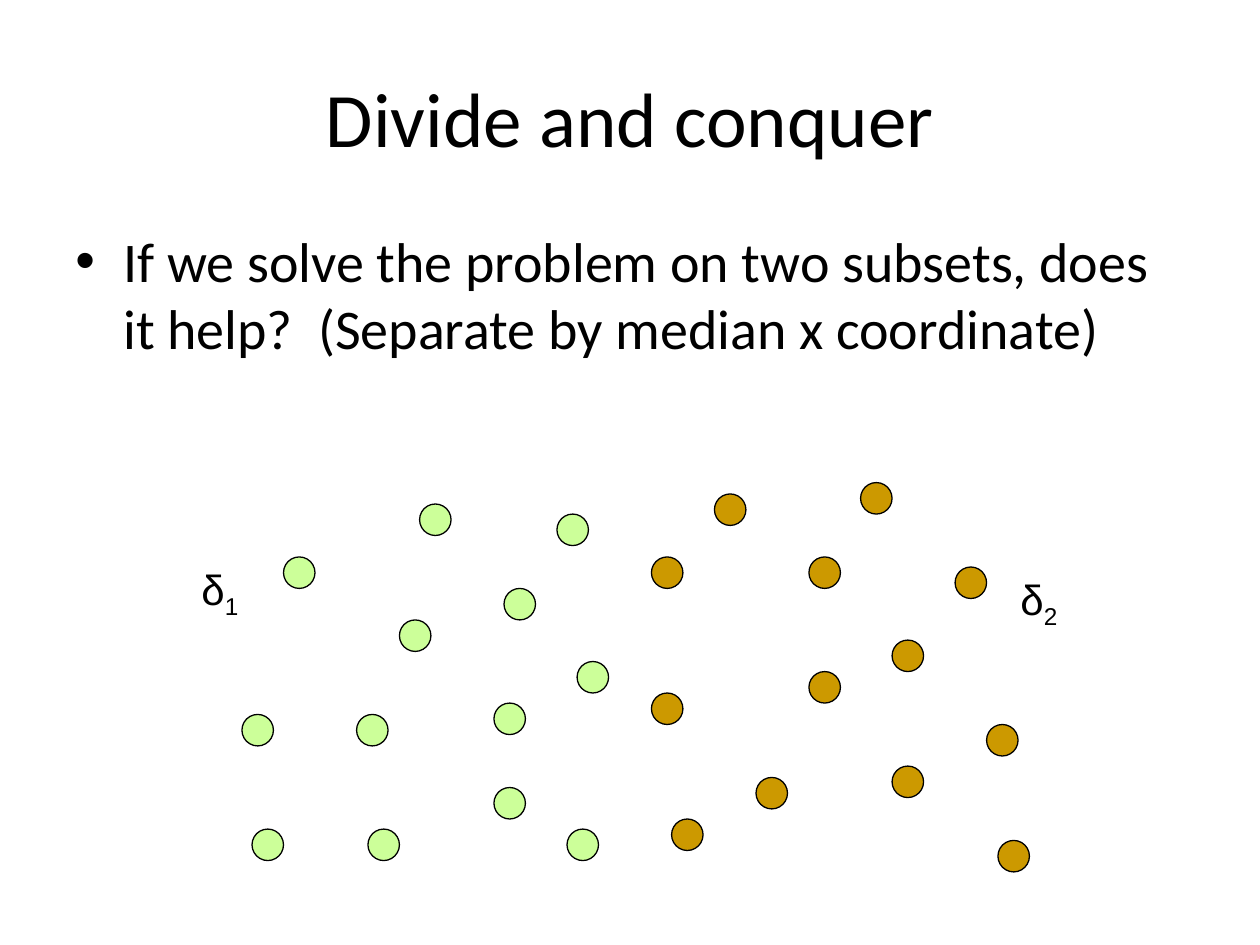
from lxml.etree import SubElement
from pptx import Presentation
from pptx.dml.color import RGBColor
from pptx.enum.shapes import MSO_SHAPE
from pptx.enum.text import MSO_ANCHOR, PP_ALIGN
from pptx.oxml.ns import qn
from pptx.util import Inches, Pt

COLORS = {"text": "000000", "left": "CCFF99", "right": "CC9900"}
DOT_SIZE = 0.25

# Top left corners of the points in each half, in inches
LEFT_POINTS = [
    (4.5, 6.58), (1.92, 5.67), (2.25, 4.42), (2.83, 5.67), (2.92, 6.58),
    (3.17, 4.92), (3.92, 6.25), (3.92, 5.58), (4.58, 5.25), (3.33, 4),
    (4, 4.67), (4.42, 4.08), (2, 6.58),
]
RIGHT_POINTS = [
    (5.33, 6.5), (7.92, 6.67), (5.17, 4.42), (6.83, 3.83), (6.42, 4.42),
    (5.67, 3.92), (5.17, 5.5), (6.42, 5.33), (7.58, 4.5), (6, 6.17),
    (7.08, 5.08), (7.08, 6.08), (7.83, 5.75),
]


def color(name):
    return RGBColor.from_string(COLORS[name])


def format_font(font, **values):
    for name, value in values.items():
        setattr(font, name, value)
    font.color.rgb = color("text")


def set_title(page, text):
    title = page.shapes.title
    place = {"left": 0.5, "top": 0.3, "width": 9, "height": 1.25}
    for name, value in place.items():
        setattr(title, name, Inches(value))
    title.text_frame.text = text
    title.text_frame.vertical_anchor = MSO_ANCHOR.MIDDLE
    para = title.text_frame.paragraphs[0]
    para.alignment = PP_ALIGN.CENTER
    format_font(para.font, name="Calibri", size=Pt(44))


def add_bullet(page, text):
    box = page.shapes.add_textbox(Inches(0.5), Inches(1.75), Inches(9), Inches(4.95))
    box.text_frame.word_wrap = True
    para = box.text_frame.paragraphs[0]
    para.text = text
    # Hanging bullet
    properties = para._p.get_or_add_pPr()
    properties.set("marL", str(Inches(0.38)))
    properties.set("indent", str(-Inches(0.38)))
    SubElement(properties, qn("a:buFont")).set("typeface", "Arial")
    SubElement(properties, qn("a:buChar")).set("char", "•")
    format_font(para.font, name="Calibri", size=Pt(32))


def add_dots(page, points, fill):
    for left, top in points:
        dot = page.shapes.add_shape(
            MSO_SHAPE.OVAL, Inches(left), Inches(top), Inches(DOT_SIZE), Inches(DOT_SIZE))
        dot.shadow.inherit = False
        dot.fill.solid()
        dot.fill.fore_color.rgb = color(fill)
        dot.line.color.rgb = color("text")
        dot.line.width = Pt(0.75)


def add_delta(page, left, top, index):
    box = page.shapes.add_textbox(Inches(left), Inches(top), Inches(0.49), Inches(0.5))
    box.text_frame.word_wrap = False
    para = box.text_frame.paragraphs[0]
    for text in ("δ", index):
        span = para.add_run()
        span.text = text
        format_font(span.font, name="Arial", size=Pt(24))
    # The index is a subscript
    span._r.get_or_add_rPr().set("baseline", "-25000")


def main():
    deck = Presentation()
    deck.slide_width, deck.slide_height = Inches(10), Inches(7.5)
    page = deck.slides.add_slide(deck.slide_layouts[5])

    set_title(page, "Divide and conquer")
    add_bullet(page, "If we solve the problem on two subsets, does it help?  "
                     "(Separate by median x coordinate)")

    # The two subsets and their smallest distances
    add_dots(page, LEFT_POINTS, "left")
    add_dots(page, RIGHT_POINTS, "right")
    add_delta(page, 1.5, 4.42, "1")
    add_delta(page, 8, 4.5, "2")

    deck.save("out.pptx")


if __name__ == "__main__":
    main()
